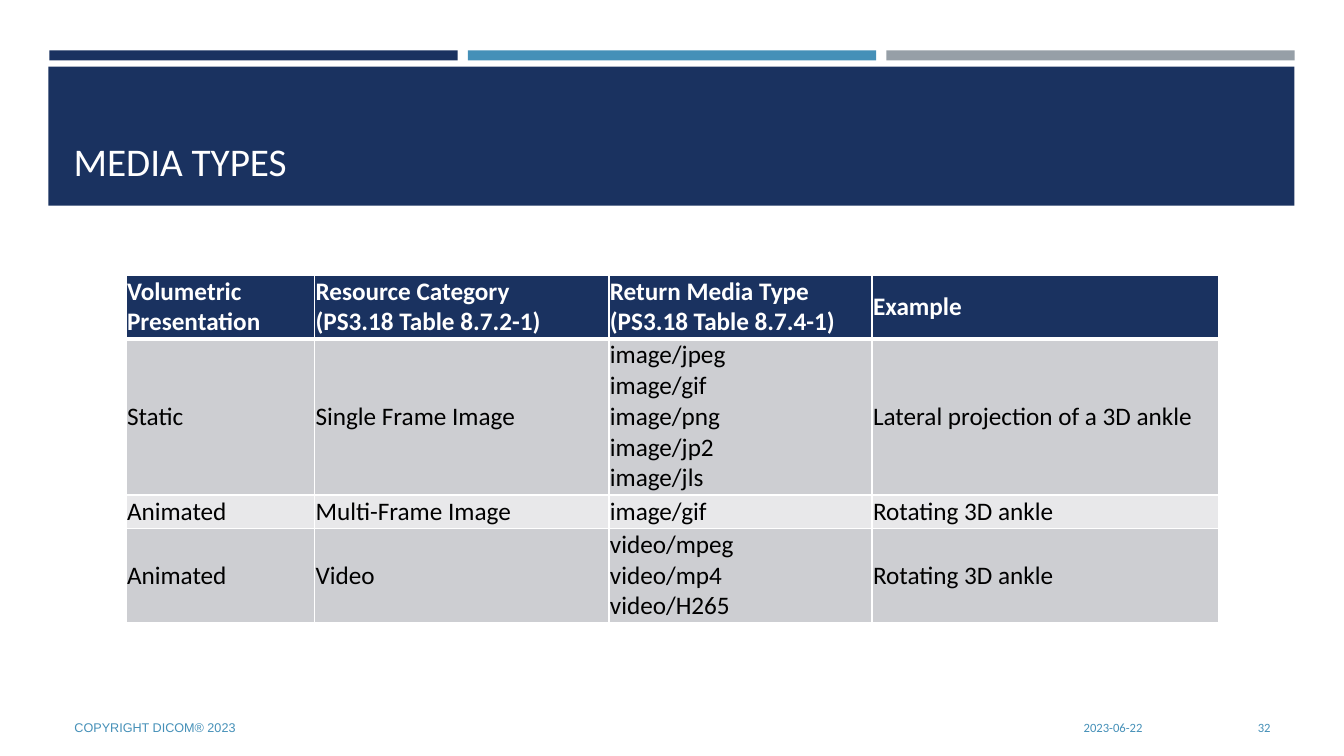
from lxml.etree import SubElement
from pptx import Presentation
from pptx.dml.color import RGBColor
from pptx.enum.shapes import MSO_SHAPE
from pptx.enum.text import MSO_ANCHOR as Anchor, PP_ALIGN as Align
from pptx.oxml.ns import qn
from pptx.util import Inches, Pt

COLORS = {
    "navy": "1A3260", "blue": "4590B8", "gray": "969FA7", "white": "FFFFFF",
    "black": "000000", "band_dark": "CDCED2", "band_light": "E8E8EA",
}
TOP_BARS = [("navy", 0.49), ("blue", 4.64), ("gray", 8.79)]
COLUMN_WIDTHS = [1.87, 2.92, 2.61, 3.44]
ROW_HEIGHTS = [0.62, 1.55, 0.33, 0.93]
MEDIA_TYPES = [
    ["Volumetric Presentation", "Resource Category\n(PS3.18 Table 8.7.2-1)",
     "Return Media Type\n(PS3.18 Table 8.7.4-1)", "Example"],
    ["Static", "Single Frame Image",
     "image/jpeg\nimage/gif\nimage/png\nimage/jp2\nimage/jls",
     "Lateral projection of a 3D ankle"],
    ["Animated", "Multi-Frame Image", "image/gif", "Rotating 3D ankle"],
    ["Animated", "Video", "video/mpeg\nvideo/mp4\nvideo/H265", "Rotating 3D ankle"],
]
FOOTER = [
    ("2023-06-22", 8.32, 3.11, "Calibri", Align.RIGHT),
    ("COPYRIGHT DICOM® 2023", 0.64, 7.56, "Arial", Align.LEFT),
    ("32", 11.55, 1.15, "Calibri", Align.RIGHT),
]


def rgb(color):
    return RGBColor.from_string(COLORS[color])


def write(frame, text, color, size, font="Calibri", bold=False, align=Align.LEFT):
    frame.text = text
    for paragraph in frame.paragraphs:
        paragraph.alignment = align
        for run in paragraph.runs:
            formats = {"name": font, "size": Pt(size), "bold": bold}
            for name, value in formats.items():
                setattr(run.font, name, value)
            run.font.color.rgb = rgb(color)


def add_bar(slide, color, left, top, width, height):
    bar = slide.shapes.add_shape(
        MSO_SHAPE.RECTANGLE, Inches(left), Inches(top), Inches(width), Inches(height))
    bar.shadow.inherit = False
    bar.fill.solid()
    bar.fill.fore_color.rgb = rgb(color)
    bar.line.fill.background()
    return bar


def place_title(slide, text, band):
    title = slide.shapes.title
    band.element.addnext(title.element)
    place = {"left": 0.63, "top": 0.8, "width": 12.06, "height": 1.08}
    for name, value in place.items():
        setattr(title, name, Inches(value))
    title.text_frame.vertical_anchor = Anchor.BOTTOM
    write(title.text_frame, text, "white", 28)


def add_borders(cell, bottom_width):
    properties = cell._tc.get_or_add_tcPr()
    for side, width in {"L": 1, "R": 1, "T": 1, "B": bottom_width}.items():
        border = SubElement(properties, qn(f"a:ln{side}"), w=str(Pt(width)))
        fill = SubElement(border, qn("a:solidFill"))
        SubElement(fill, qn("a:srgbClr"), val=COLORS["white"])


def format_cell(cell, text, row):
    header = row == 0
    margins = ("margin_left", "margin_right", "margin_top", "margin_bottom")
    formats = dict.fromkeys(margins, Inches(0.01))
    formats["vertical_anchor"] = Anchor.MIDDLE
    for name, value in formats.items():
        setattr(cell, name, value)
    add_borders(cell, 3 if header else 1)
    band = "band_dark" if row % 2 else "band_light"
    cell.fill.solid()
    cell.fill.fore_color.rgb = rgb("navy" if header else band)
    write(cell.text_frame, text, "white" if header else "black", 18, bold=header)


def add_media_table(slide):
    table = slide.shapes.add_table(
        len(ROW_HEIGHTS), len(COLUMN_WIDTHS), Inches(1.25), Inches(2.73),
        Inches(sum(COLUMN_WIDTHS)), Inches(sum(ROW_HEIGHTS))).table
    for column, width in zip(table.columns, COLUMN_WIDTHS):
        column.width = Inches(width)
    for row, height in enumerate(ROW_HEIGHTS):
        table.rows[row].height = Inches(height)
        for column, text in enumerate(MEDIA_TYPES[row]):
            format_cell(table.cell(row, column), text, row)


def add_footer_text(slide, text, left, width, font, align):
    frame = slide.shapes.add_textbox(
        Inches(left), Inches(7.02), Inches(width), Inches(0.4)).text_frame
    frame.word_wrap = True
    frame.vertical_anchor = Anchor.MIDDLE
    write(frame, text, "blue", 9, font, align=align)


def main():
    deck = Presentation()
    deck.slide_width, deck.slide_height = Inches(13.33), Inches(7.5)
    slide = deck.slides.add_slide(deck.slide_layouts.get_by_name("Title Only"))
    for color, left in TOP_BARS:
        add_bar(slide, color, left, 0.5, 4.05, 0.1)
    band = add_bar(slide, "navy", 0.48, 0.66, 12.36, 1.38)
    place_title(slide, "MEDIA TYPES", band)
    add_media_table(slide)
    for entry in FOOTER:
        add_footer_text(slide, *entry)
    deck.save("out.pptx")


if __name__ == "__main__":
    main()
